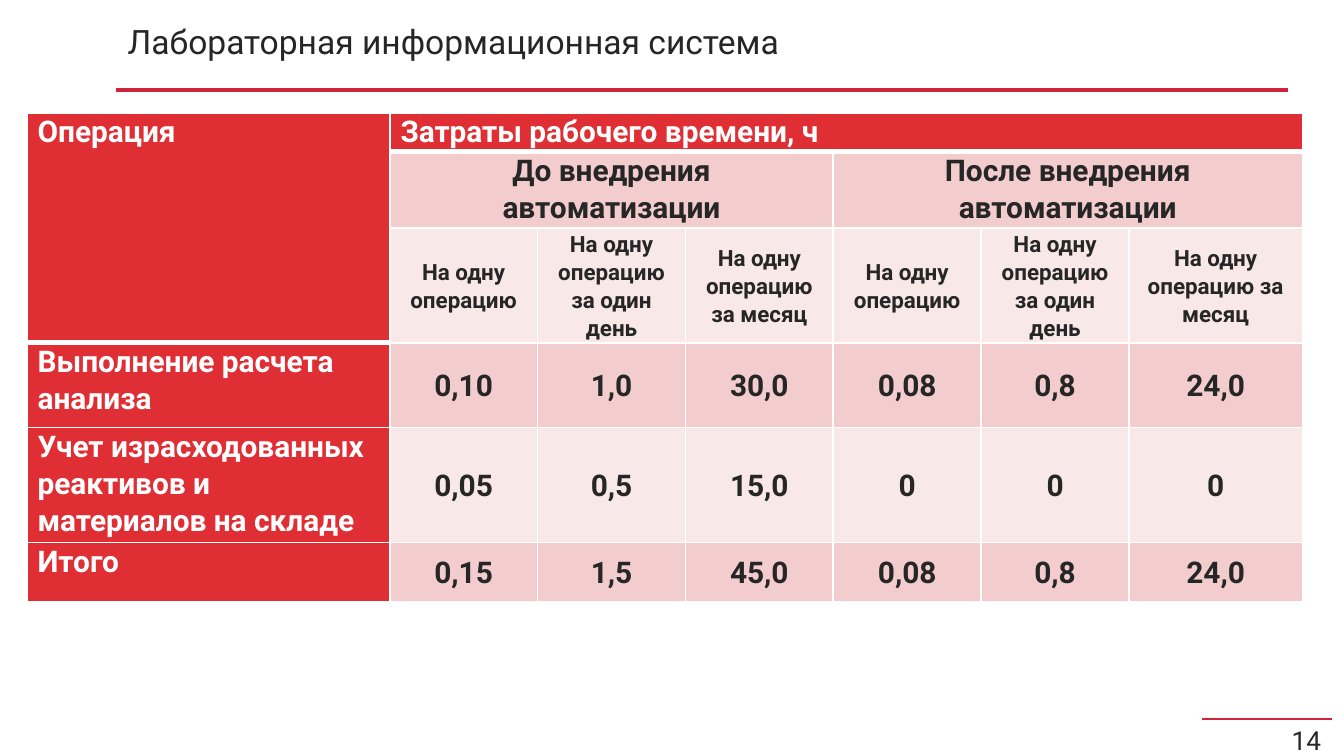
from pptx import Presentation
from pptx.dml.color import RGBColor
from pptx.enum.shapes import MSO_CONNECTOR
from pptx.enum.text import MSO_ANCHOR, PP_ALIGN
from pptx.oxml.ns import qn
from pptx.util import Inches, Pt
from lxml.etree import SubElement

RULE_RED = RGBColor(0xD2, 0x23, 0x3C)
HEADER_RED = RGBColor(0xDF, 0x2F, 0x35)
PINK = RGBColor(0xF3, 0xCD, 0xCE)
PALE_PINK = RGBColor(0xF9, 0xE8, 0xE8)
INK = RGBColor(0x26, 0x26, 0x26)
WHITE = RGBColor(0xFF, 0xFF, 0xFF)

PERIODS = ["На одну операцию", "На одну операцию за один день",
           "На одну операцию за месяц"]
ROWS = [
    ["Операция", "Затраты рабочего времени, ч"] + [None] * 5,
    [None, "До внедрения автоматизации", None, None,
     "После внедрения автоматизации", None, None],
    [None] + PERIODS * 2,
    ["Выполнение расчета анализа", "0,10", "1,0", "30,0", "0,08", "0,8", "24,0"],
    ["Учет израсходованных реактивов и материалов на складе",
     "0,05", "0,5", "15,0", "0", "0", "0"],
    ["Итого", "0,15", "1,5", "45,0", "0,08", "0,8", "24,0"],
]
MERGES = [((0, 0), (2, 0)), ((0, 1), (0, 6)), ((1, 1), (1, 3)), ((1, 4), (1, 6))]
COL_WIDTHS = [2.7] + [1.1] * 5 + [1.29]
ROW_HEIGHTS = [0.21, 0.44, 0.85, 0.63, 0.78, 0.44]
PERIOD_ROW = 2


class SlideBuilder:
    def __init__(self, slide, font="Roboto"):
        self.slide = slide
        self.font = font

    def style(self, p, size, color=INK, bold=False, align=PP_ALIGN.LEFT, spacing=1.0):
        p.alignment = align
        p.line_spacing = spacing
        p.font.name = self.font
        p.font.size = Pt(size)
        p.font.bold = bold
        p.font.color.rgb = color

    def rule(self, x1, x2, y, width):
        line = self.slide.shapes.add_connector(
            MSO_CONNECTOR.STRAIGHT, Inches(x1), Inches(y), Inches(x2), Inches(y))
        line.line.color.rgb = RULE_RED
        line.line.width = Pt(width)
        SubElement(line._element.spPr, qn("a:effectLst"))

    def fill_frame(self, tf, text):
        tf.word_wrap = True
        tf.vertical_anchor = MSO_ANCHOR.TOP
        tf.margin_left = tf.margin_right = Inches(0.09)
        tf.margin_top = tf.margin_bottom = Inches(0.04)
        tf.text = text
        return tf.paragraphs[0]

    def title(self, text, x, y, w, h):
        sp = self.slide.shapes.title
        sp.left, sp.top, sp.width, sp.height = map(Inches, (x, y, w, h))
        self.style(self.fill_frame(sp.text_frame, text), 18, spacing=0.9)

    def page_number(self, text, x, y, w, h):
        sp = self.slide.shapes.add_textbox(*map(Inches, (x, y, w, h)))
        self.style(self.fill_frame(sp.text_frame, text), 14, align=PP_ALIGN.RIGHT)

    def borders(self, cell, top, bottom):
        tcPr = cell._tc.get_or_add_tcPr()
        for side, width in (("L", 1), ("R", 1), ("T", top), ("B", bottom)):
            ln = SubElement(tcPr, qn(f"a:ln{side}"), w=str(Pt(width)))
            fill = SubElement(ln, qn("a:solidFill"))
            SubElement(fill, qn("a:srgbClr"), val=str(WHITE))

    def cell(self, cell, row, col, text):
        is_header = row == 0 or col == 0
        header_end = PERIOD_ROW if col == 0 else 0
        self.borders(cell, top=3 if row == header_end + 1 else 1,
                     bottom=3 if row == header_end else 1)
        cell.fill.solid()
        cell.fill.fore_color.rgb = (
            HEADER_RED if is_header else PINK if row % 2 else PALE_PINK)
        cell.margin_left = cell.margin_right = Inches(0.08)
        cell.margin_top = cell.margin_bottom = 0
        middle = row >= PERIOD_ROW and not is_header
        cell.vertical_anchor = MSO_ANCHOR.MIDDLE if middle else MSO_ANCHOR.TOP
        if text:
            cell.text = text
        self.style(cell.text_frame.paragraphs[0],
                   12 if row == PERIOD_ROW else 16,
                   color=WHITE if is_header else INK, bold=True,
                   align=PP_ALIGN.LEFT if is_header else PP_ALIGN.CENTER,
                   spacing=1.07)

    def table(self, rows, x, y):
        table = self.slide.shapes.add_table(
            len(rows), len(COL_WIDTHS), Inches(x), Inches(y),
            Inches(sum(COL_WIDTHS)), Inches(sum(ROW_HEIGHTS))).table
        for column, width in zip(table.columns, COL_WIDTHS):
            column.width = Inches(width)
        for table_row, height in zip(table.rows, ROW_HEIGHTS):
            table_row.height = Inches(height)
        for first, last in MERGES:
            table.cell(*first).merge(table.cell(*last))
        for r, texts in enumerate(rows):
            for c, text in enumerate(texts):
                self.cell(table.cell(r, c), r, c, text)


def main():
    prs = Presentation()
    prs.slide_width = Inches(10)
    prs.slide_height = prs.slide_width * 9 // 16
    builder = SlideBuilder(prs.slides.add_slide(prs.slide_layouts[5]))
    builder.rule(8.94, 9.91, 5.35, 1.5)
    builder.page_number("14", 8.94, 5.35, 0.98, 0.23)
    builder.rule(9.58, 0.86, 0.67, 2.25)
    builder.title("Лабораторная информационная система", 0.86, 0.15, 8.07, 0.47)
    builder.table(ROWS, 0.2, 0.84)
    prs.save("out.pptx")


if __name__ == "__main__":
    main()
